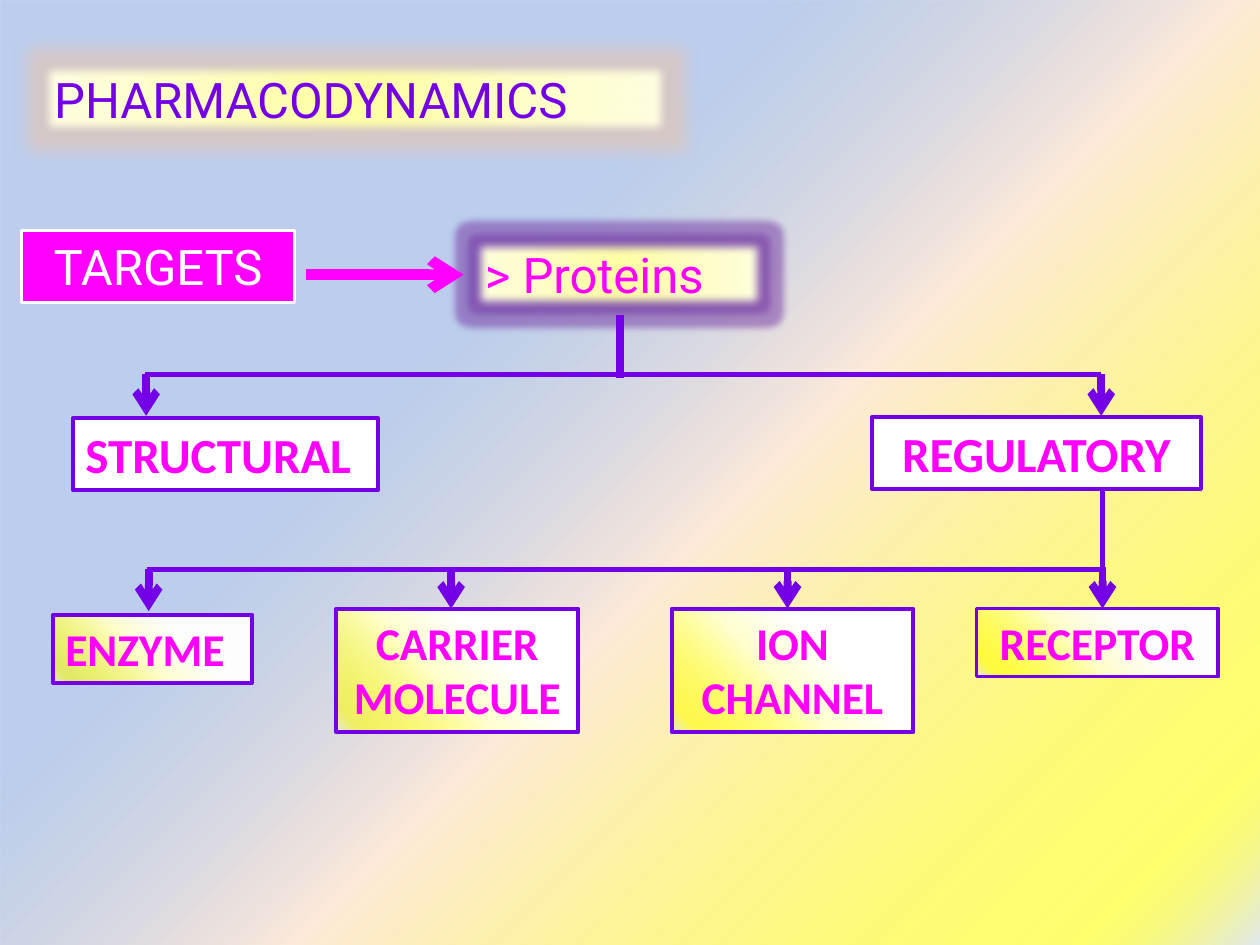
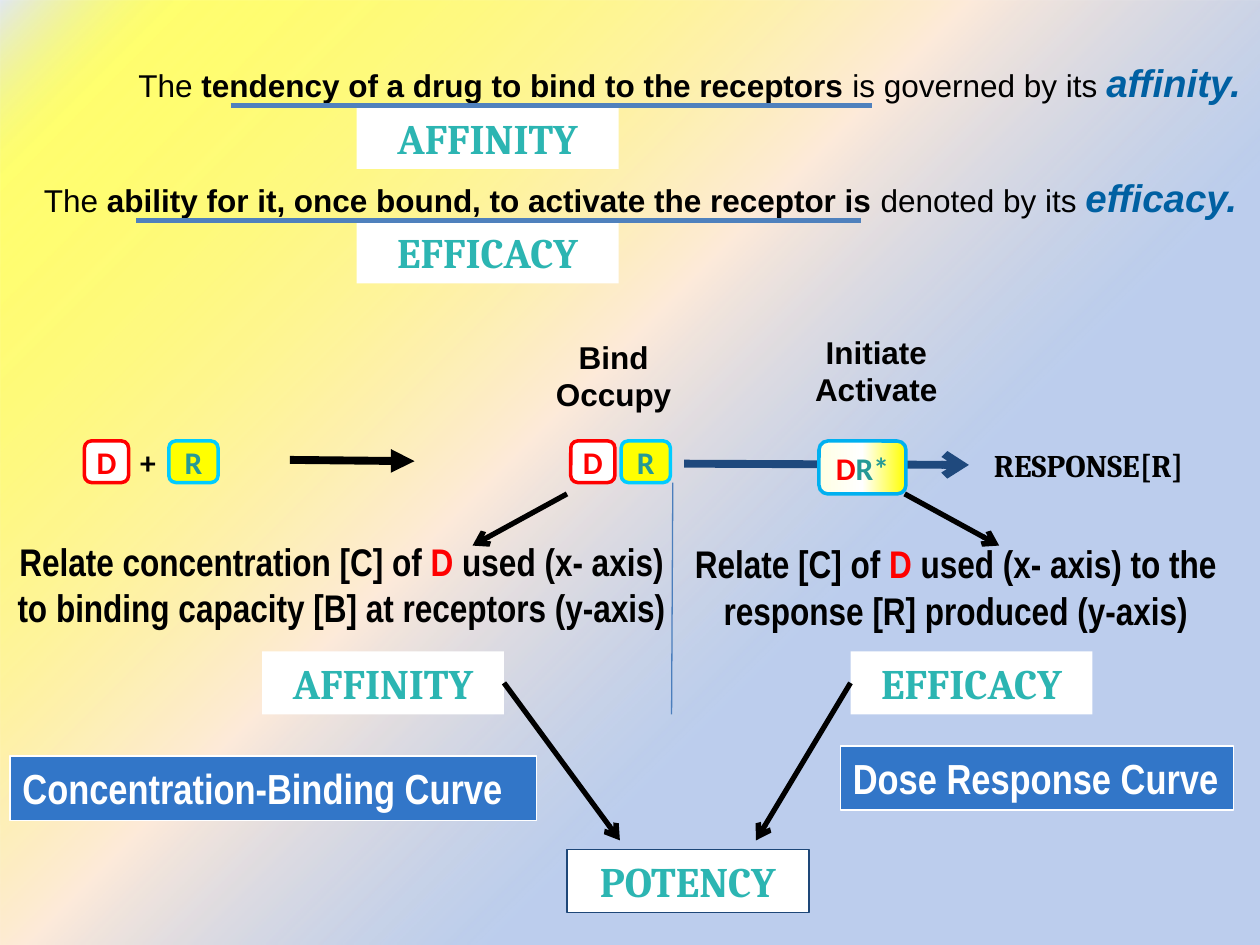
from lxml import etree
from pptx import Presentation
from pptx import util as u
from pptx.dml import color
from pptx.enum import shapes, text
from pptx.oxml import ns

I = u.Inches
RECT = shapes.MSO_SHAPE.RECTANGLE
ROUND = shapes.MSO_SHAPE.ROUNDED_RECTANGLE
LEFT, MID = text.PP_ALIGN.LEFT, text.PP_ALIGN.CENTER

PINK, PLUM, WHITE, BLACK = "FF00FF", "7300E6", "FFFFFF", "000000"
RED, TEAL, AQUA, STEEL = "FF0000", "269996", "2CB5B2", "3276C8"

SKY = [(35, "9AB5E4", 66), (56, "FDEADA", 100), (92, "FFFF00", 56), (100, "E1E8F5", 100)]
SUN = [(35, WHITE, 100), (57, "FFFFCC", 100), (92, "FFFF00", 56), (100, "E1E8F5", 100)]
CREAM = [(0, "FFFFA0", 100), (50, "FFFFC5", 100), (100, "FFFFE3", 100)]
LEMON = [(0, "FFFF00", 100), (50, WHITE, 100), (100, "FFFFE3", 100)]


def tint(code):
    return color.RGBColor.from_string(code)


def node(base, tag, **attrs):
    item = etree.SubElement(base, ns.qn("a:" + tag))
    for key, value in attrs.items():
        item.set(key, str(value))
    return item


def shade(base, code, alpha):
    node(node(base, "srgbClr", val=code), "alpha", val=alpha * 1000)


class Deck:
    def __init__(self):
        self.show = Presentation()
        self.show.slide_width, self.show.slide_height = I(10), I(7.5)

    def page(self, layout, angle):
        self.slide = self.show.slides.add_slide(self.show.slide_layouts[layout])
        back = self.box(0, 0, 10, 7.5, (SKY, angle))
        self.slide.shapes._spTree.insert(2, back._element)

    def blend(self, shape, stops, angle):
        shape.fill.gradient()
        grad = shape._element.spPr.find(ns.qn("a:gradFill"))
        for child in list(grad):
            grad.remove(child)
        steps = node(grad, "gsLst")
        for place, code, alpha in stops:
            shade(node(steps, "gs", pos=place * 1000), code, alpha)
        if angle is None:
            disc = node(grad, "path", **{"path": "circle"})
            node(disc, "fillToRect", l=50000, t=50000, r=50000, b=50000)
        else:
            node(grad, "lin", ang=angle * 60000, scaled=0)

    def paint(self, shape, fill, edge):
        shape.shadow.inherit = False
        if fill is None:
            shape.fill.background()
        elif isinstance(fill, tuple):
            self.blend(shape, *fill)
        else:
            shape.fill.solid()
            shape.fill.fore_color.rgb = tint(fill)
        if edge:
            shape.line.color.rgb = tint(edge[0])
            shape.line.width = u.Pt(edge[1])
        else:
            shape.line.fill.background()

    def letter(self, shape, lines, font, size, hue, bold=False, align=MID,
               wrap=True, anchor=text.MSO_ANCHOR.TOP):
        frame = shape.text_frame
        frame.auto_size = text.MSO_AUTO_SIZE.NONE
        frame.word_wrap = wrap
        frame.vertical_anchor = anchor
        for n, line in enumerate(lines):
            para = frame.add_paragraph() if n else frame.paragraphs[0]
            para.alignment = align
            for words, extra in line:
                look = {"size": size, "hue": hue, "bold": bold, "slant": False, **extra}
                run = para.add_run()
                run.text = words
                run.font.name = font
                run.font.size = u.Pt(look["size"])
                run.font.bold = look["bold"]
                run.font.italic = look["slant"]
                run.font.color.rgb = tint(look["hue"])

    def box(self, x, y, w, h, fill=None, edge=None, kind=RECT):
        shape = self.slide.shapes.add_shape(kind, I(x), I(y), I(w), I(h))
        self.paint(shape, fill, edge)
        return shape

    def label(self, words, x, y, w, h, fill, edge, font, size, hue, bold=True, **style):
        shape = self.box(x, y, w, h, fill, edge)
        self.letter(shape, [[(words, {})]], font, size, hue, bold, **style)
        return shape

    def note(self, lines, x, y, w, h, font, size, **style):
        shape = self.slide.shapes.add_textbox(I(x), I(y), I(w), I(h))
        self.letter(shape, lines, font, size, BLACK, **style)

    def title(self, words, x, y, w, h):
        shape = self.slide.shapes.title
        shape.left, shape.top, shape.width, shape.height = I(x), I(y), I(w), I(h)
        self.paint(shape, (CREAM, None), None)
        self.letter(shape, [[(words, {})]], "Roboto", 28, PLUM, align=LEFT)
        return shape

    def glow(self, shape, code, alpha, reach):
        effects = shape._element.spPr.find(ns.qn("a:effectLst"))
        shade(node(effects, "glow", rad=u.Pt(reach)), code, alpha)
        node(effects, "softEdge", rad=u.Pt(5))

    def line(self, x, y, end, low, hue, width, head=None):
        link = self.slide.shapes.add_connector(
            shapes.MSO_CONNECTOR.STRAIGHT, I(x), I(y), I(end), I(low))
        link.line.color.rgb = tint(hue)
        link.line.width = u.Pt(width)
        if head:
            node(link._element.spPr.find(ns.qn("a:ln")), "tailEnd", type=head)
        node(link._element.spPr, "effectLst")

    def drop(self, x, y):
        self.line(x, y, x, y + 0.33, PLUM, 4.5, "arrow")

    def badge(self, runs, x, w, h=0.33, fill=None, edge=None):
        shape = self.box(x, 3.5, w, h, fill, edge and (edge, 2), ROUND)
        self.letter(shape, [runs], "Calibri", 18, BLACK, True, wrap=False,
                    anchor=text.MSO_ANCHOR.MIDDLE)

    def pair(self, drug, site):
        self.badge([("R", {"hue": TEAL})], site, 0.39, fill="FFFF00", edge="00CCFF")
        self.badge([("D", {"hue": RED})], drug, 0.35, fill=WHITE, edge=RED)

    def term(self, words, x, y, w=1.92, edge=None):
        self.label(words, x, y, w, 0.5, WHITE, edge, "Cambria", 24, AQUA)


def targets(deck):
    deck.page(5, 45)
    head = deck.title("PHARMACODYNAMICS", 0.33, 0.5, 4.98, 0.57)
    deck.glow(head, "FAC090", 40, 18)
    root = deck.label("> Proteins", 3.75, 1.89, 2.33, 0.57, (CREAM, None), None,
                      "Roboto", 28, PINK, False, align=LEFT)
    deck.glow(root, "7030A0", 50, 8)
    deck.line(2.43, 2.18, 3.68, 2.18, PINK, 6, "arrow")
    deck.label("TARGETS", 0.17, 1.83, 2.17, 0.57, PINK, (WHITE, 1.5),
               "Roboto", 28, WHITE, False)

    deck.line(4.92, 2.5, 4.92, 3, PLUM, 4.5)
    deck.line(1.15, 2.97, 8.74, 2.97, PLUM, 3)
    deck.line(8.75, 3.85, 8.75, 4.52, PLUM, 3)
    deck.line(1.17, 4.52, 8.75, 4.52, PLUM, 3)
    for x, y in [(1.16, 2.97), (8.74, 2.97), (1.18, 4.52),
                 (3.58, 4.5), (6.25, 4.5), (8.75, 4.5)]:
        deck.drop(x, y)

    edge = (PLUM, 2.25)
    for words, x, y, w, align in [("STRUCTURAL", 0.58, 3.32, 2.42, LEFT),
                                  ("REGULATORY", 6.92, 3.31, 2.61, MID)]:
        deck.label(words, x, y, w, 0.57, WHITE, edge, "Calibri", 28, PINK, align=align)
    for words, x, y, w, h, align in [("ENZYME", 0.42, 4.88, 1.58, 0.54, LEFT),
                                     ("CARRIER MOLECULE", 2.67, 4.83, 1.92, 0.98, MID),
                                     ("ION CHANNEL", 5.33, 4.83, 1.92, 0.98, MID),
                                     ("RECEPTOR", 7.75, 4.83, 1.92, 0.54, MID)]:
        deck.label(words, x, y, w, h, (SUN, 135), edge, "Calibri", 26, PINK, align=align)


def binding(deck):
    deck.page(6, 225)
    key = {"size": 22, "hue": "0060A2", "bold": True, "slant": True}
    for x, y, bold, plain, last, start, end in [
            (1, 0.42, "tendency of a drug to bind to the receptors",
             " is governed by its ", "affinity.", 1.83, 6.92),
            (0.25, 1.33, "ability for it, once bound, to activate the receptor is",
             " denoted by its ", "efficacy.", 1.08, 6.83)]:
        runs = [("The ", {}), (bold, {"bold": True}), (plain, {}), (last, key)]
        deck.note([runs], x, y, 10 - x, 0.47, "Arial", 18, align=LEFT)
        deck.term(last[:-1].upper(), 2.83, y + 0.42, 2.08)
        deck.line(start, y + 0.42, end, y + 0.42, "4F81BD", 3)

    deck.pair(4.53, 4.93)
    deck.pair(0.67, 1.34)
    for words, x, y, w in [(("Bind", "Occupy"), 4.22, 2.63, 1.3),
                           (("Initiate", "Activate"), 6.13, 2.59, 1.65)]:
        deck.note([[(word, {})] for word in words], x, y, w, 0.7, "Arial", 18, bold=True)
    deck.note([[("RESPONSE[R]", {})]], 7.69, 3.49, 1.9, 0.4, "Cambria", 18, bold=True)
    deck.line(2.3, 3.65, 3.29, 3.66, BLACK, 4.5, "triangle")
    deck.line(5.43, 3.68, 7.69, 3.69, "1F497D", 4.5, "arrow")
    deck.badge([("+", {})], 1, 0.35)
    deck.badge([("D", {"hue": RED}), ("R*", {"hue": TEAL})], 6.5, 0.69, 0.42,
               (LEMON, 180), "00B0F0")

    for start, rest, x, y, w in [
            ("Relate [C] of ", " used (x- axis) to the response [R] produced (y-axis)",
             5.25, 4.24, 4.67),
            ("Relate concentration [C] of ",
             " used (x- axis) to binding capacity [B] at receptors (y-axis)",
             -0.08, 4.22, 5.58)]:
        runs = [(start, {}), ("D", {"hue": RED}), (rest, {})]
        deck.note([runs], x, y, w, 0.83, "Arial Narrow", 22, bold=True)

    deck.term("AFFINITY", 2.08, 5.17)
    deck.term("EFFICACY", 6.75, 5.17)
    deck.term("POTENCY", 4.5, 6.74, edge=("1E4778", 0.75))
    for words, x, y, w in [("Concentration-Binding Curve", 0.08, 6, 4.18),
                           ("Dose Response Curve", 6.67, 5.92, 3.12)]:
        deck.label(words, x, y, w, 0.51, STEEL, (WHITE, 0.75), "Arial Narrow", 24,
                   WHITE, align=LEFT, wrap=False)
    for x, y, end, low in [(7.18, 3.92, 7.93, 4.33), (4.5, 3.92, 3.75, 4.33),
                           (4, 5.42, 4.92, 6.67), (6.75, 5.42, 6, 6.67)]:
        deck.line(x, y, end, low, BLACK, 3, "arrow")
    deck.line(5.34, 3.83, 5.33, 5.67, "4B7EBC", 0.75)


def main():
    deck = Deck()
    targets(deck)
    binding(deck)
    deck.show.save("out.pptx")


if __name__ == "__main__":
    main()
